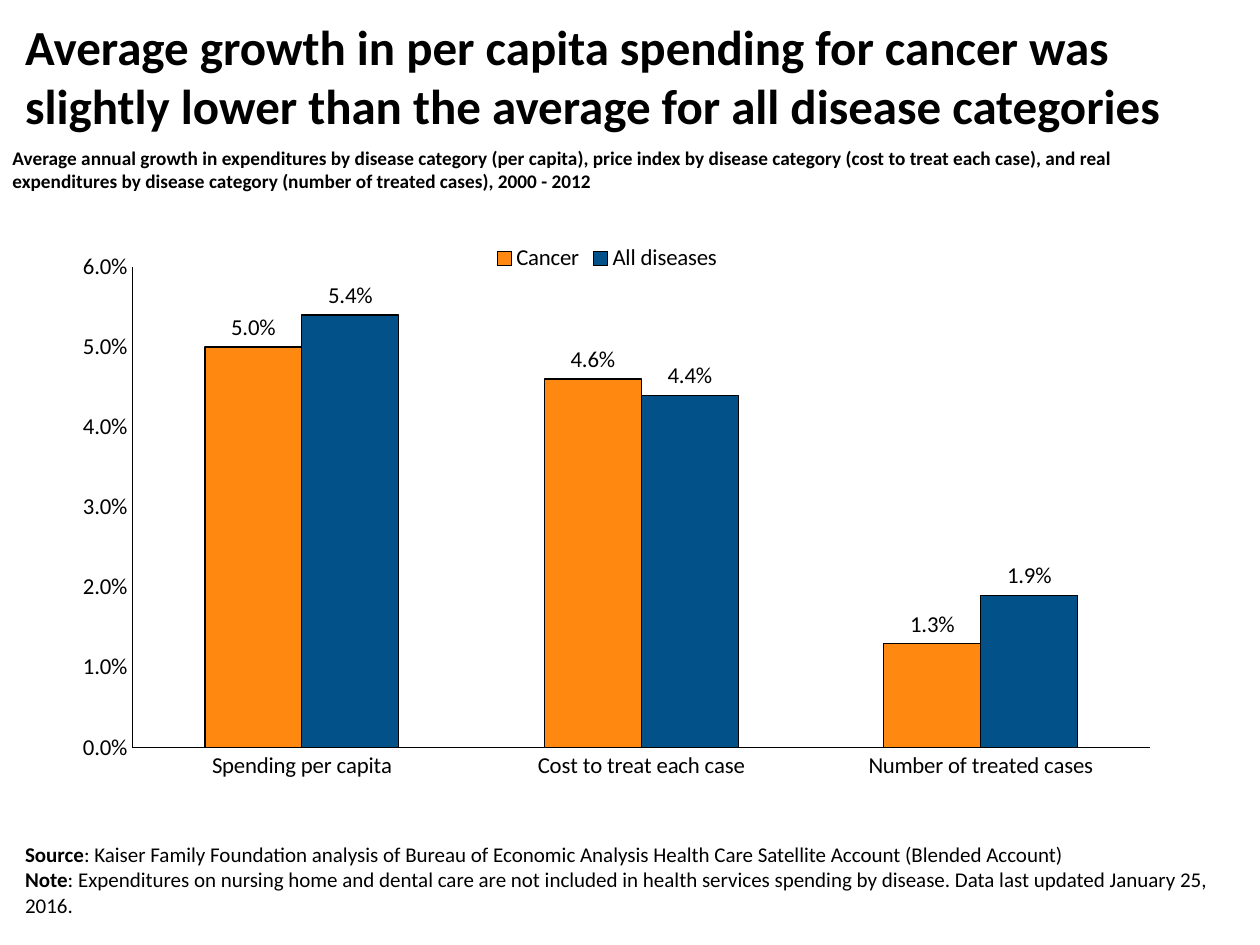
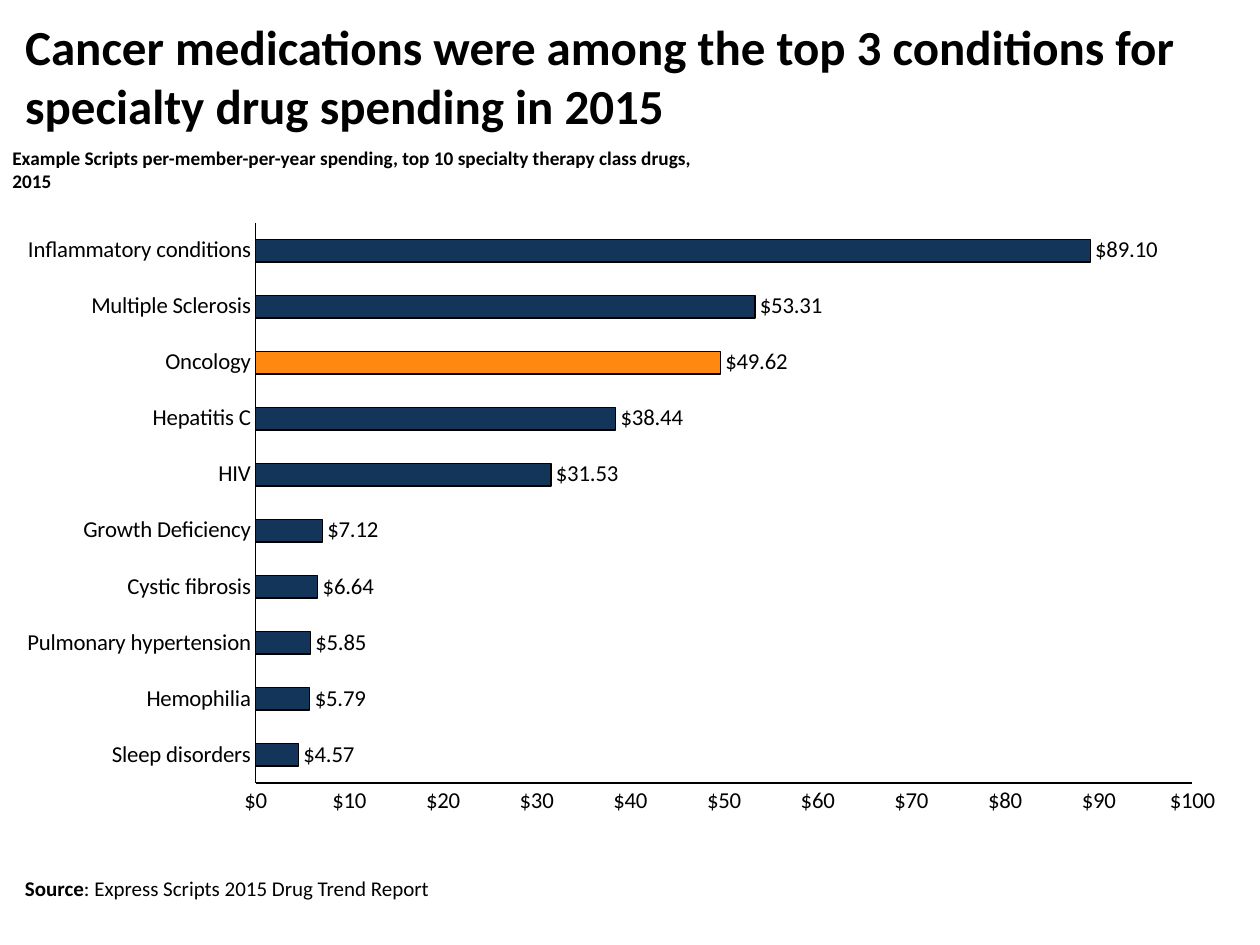
from dataclasses import dataclass
from lxml import etree
from pptx import Presentation
from pptx.chart.data import CategoryChartData
from pptx.dml.color import RGBColor
from pptx.enum.chart import XL_CHART_TYPE, XL_LABEL_POSITION, XL_LEGEND_POSITION, XL_TICK_MARK
from pptx.enum.text import MSO_ANCHOR, MSO_AUTO_SIZE, PP_ALIGN
from pptx.oxml.ns import qn
from pptx.util import Inches, Pt


@dataclass(frozen=True)
class Theme:
    font: str = "Calibri"
    ink: str = "000000"
    orange: str = "FF8811"
    blue: str = "025189"
    navy: str = "133559"
    title: int = 28
    lead: int = 11
    note: int = 12
    chart: int = 13
    line: float = 0.75


THEME = Theme()

SLIDES = [
    {
        "title": "Average growth in per capita spending for cancer was slightly lower "
                 "than the average for all disease categories",
        "lead": "Average annual growth in expenditures by disease category (per capita), "
                "price index by disease category (cost to treat each case), and real "
                "expenditures by disease category (number of treated cases), 2000 - 2012",
        "lead_box": (0, 1.11, 9.75, 0.47),
        "wrap": True,
        "notes": [
            ("Source", ": Kaiser Family Foundation analysis of Bureau of Economic Analysis "
                       "Health Care Satellite Account (Blended Account)"),
            ("Note", ": Expenditures on nursing home and dental care are not included in "
                     "health services spending by disease. Data last updated January 25, 2016."),
        ],
        "note_box": (0.1, 6.53, 9.82, 0.8),
        "chart": {
            "kind": XL_CHART_TYPE.COLUMN_CLUSTERED,
            "box": (-0.09, 1.83, 9.82, 4.9),
            "cats": ["Spending per capita", "Cost to treat each case",
                     "Number of treated cases"],
            "series": [
                ("Cancer", THEME.orange, [0.05, 0.046, 0.013]),
                ("All diseases", THEME.blue, [0.054, 0.044, 0.019]),
            ],
            "points": {},
            "max": 0.06,
            "step": 0.01,
            "axis_format": "0.0%",
            "label_format": "0.0%",
            "legend": True,
            "plot": {"x": 0.116, "y": 0.059, "w": 0.823, "h": 0.779},
        },
    },
    {
        "title": "Cancer medications were among the top 3 conditions for specialty drug "
                 "spending in 2015",
        "lead": "Example Scripts per-member-per-year spending, top 10 specialty therapy "
                "class drugs, 2015",
        "lead_box": (0, 1.11, 5.9, 0.29),
        "wrap": False,
        "notes": [("Source", ": Express Scripts 2015 Drug Trend Report")],
        "note_box": (0.1, 6.4, 9.8, 0.8),
        "chart": {
            "kind": XL_CHART_TYPE.BAR_CLUSTERED,
            "box": (0.02, 1.67, 9.82, 4.9),
            "cats": ["Sleep disorders", "Hemophilia", "Pulmonary hypertension",
                     "Cystic fibrosis", "Growth Deficiency", "HIV", "Hepatitis C",
                     "Oncology", "Multiple Sclerosis", "Inflammatory conditions"],
            "series": [
                ("Series 1", THEME.navy,
                 [4.57, 5.79, 5.85, 6.64, 7.12, 31.53, 38.44, 49.62, 53.31, 89.1]),
            ],
            "points": {"Oncology": THEME.orange},
            "max": 100,
            "step": 10,
            "axis_format": '"$"#,##0',
            "label_format": '"$"#,##0.00',
            "legend": False,
            "plot": None,
        },
    },
]


def place(box):
    return [Inches(n) for n in box]


def style(font, size, bold=None):
    font.name = THEME.font
    font.size = Pt(size)
    font.color.rgb = RGBColor.from_string(THEME.ink)
    if bold is not None:
        font.bold = bold


def rule(line):
    line.color.rgb = RGBColor.from_string(THEME.ink)
    line.width = Pt(THEME.line)


def paint(part, color):
    part.format.fill.solid()
    part.format.fill.fore_color.rgb = RGBColor.from_string(color)
    rule(part.format.line)


def add_title(slide, text):
    title = slide.shapes.title
    title.left, title.top, title.width, title.height = place((0.1, 0.1, 9.8, 1))
    frame = title.text_frame
    frame.text = text
    frame.auto_size = MSO_AUTO_SIZE.NONE
    frame.vertical_anchor = MSO_ANCHOR.MIDDLE
    frame.paragraphs[0].alignment = PP_ALIGN.LEFT
    style(frame.paragraphs[0].font, THEME.title, True)


def add_lead(slide, text, box, wrap):
    frame = slide.shapes.add_textbox(*place(box)).text_frame
    frame.word_wrap = wrap
    frame.text = text
    style(frame.paragraphs[0].font, THEME.lead, True)


def add_notes(slide, notes, box):
    frame = slide.shapes.add_textbox(*place(box)).text_frame
    frame.word_wrap = True
    frame.vertical_anchor = MSO_ANCHOR.BOTTOM
    for i, (head, body) in enumerate(notes):
        par = frame.add_paragraph() if i else frame.paragraphs[0]
        style(par.font, THEME.note)
        for text, bold in ((head, True), (body, False)):
            run = par.add_run()
            run.text = text
            run.font.bold = bold


def set_plot(chart, plot):
    area = chart.element.find(".//" + qn("c:plotArea"))
    for old in area.findall(qn("c:layout")):
        area.remove(old)
    layout = etree.Element(qn("c:layout"))
    area.insert(0, layout)
    manual = etree.SubElement(layout, qn("c:manualLayout"))
    parts = {"layoutTarget": "inner", "xMode": "edge", "yMode": "edge", **plot}
    for name, val in parts.items():
        etree.SubElement(manual, qn("c:" + name)).set("val", str(val))


def set_axes(chart, data):
    for axis in (chart.category_axis, chart.value_axis):
        axis.has_major_gridlines = False
        axis.major_tick_mark = XL_TICK_MARK.NONE
        axis.minor_tick_mark = XL_TICK_MARK.NONE
        rule(axis.format.line)
    axis = chart.value_axis
    axis.minimum_scale = 0
    axis.maximum_scale = data["max"]
    axis.major_unit = data["step"]
    axis.tick_labels.number_format = data["axis_format"]
    axis.tick_labels.number_format_is_linked = False


def add_bars(slide, data):
    table = CategoryChartData()
    table.categories = data["cats"]
    for name, color, vals in data["series"]:
        table.add_series(name, vals)
    chart = slide.shapes.add_chart(data["kind"], *place(data["box"]), table).chart
    chart.has_title = False
    style(chart.font, THEME.chart)
    set_axes(chart, data)
    chart.has_legend = data["legend"]
    if data["legend"]:
        chart.legend.position = XL_LEGEND_POSITION.TOP
        chart.legend.include_in_layout = False
    if data["plot"]:
        set_plot(chart, data["plot"])

    plot = chart.plots[0]
    plot.gap_width = 150
    plot.overlap = 0
    plot.vary_by_categories = False
    for bars, (name, color, vals) in zip(plot.series, data["series"]):
        bars.invert_if_negative = False
        paint(bars, color)
        for cat, tint in data["points"].items():
            paint(bars.points[data["cats"].index(cat)], tint)
        labels = bars.data_labels
        labels.show_value = True
        labels.position = XL_LABEL_POSITION.OUTSIDE_END
        labels.number_format = data["label_format"]
        labels.number_format_is_linked = False


def main():
    deck = Presentation()
    deck.slide_width, deck.slide_height = Inches(10), Inches(7.5)
    for page in SLIDES:
        slide = deck.slides.add_slide(deck.slide_layouts[5])
        add_notes(slide, page["notes"], page["note_box"])
        add_title(slide, page["title"])
        add_lead(slide, page["lead"], page["lead_box"], page["wrap"])
        add_bars(slide, page["chart"])
    deck.save("out.pptx")


if __name__ == "__main__":
    main()
